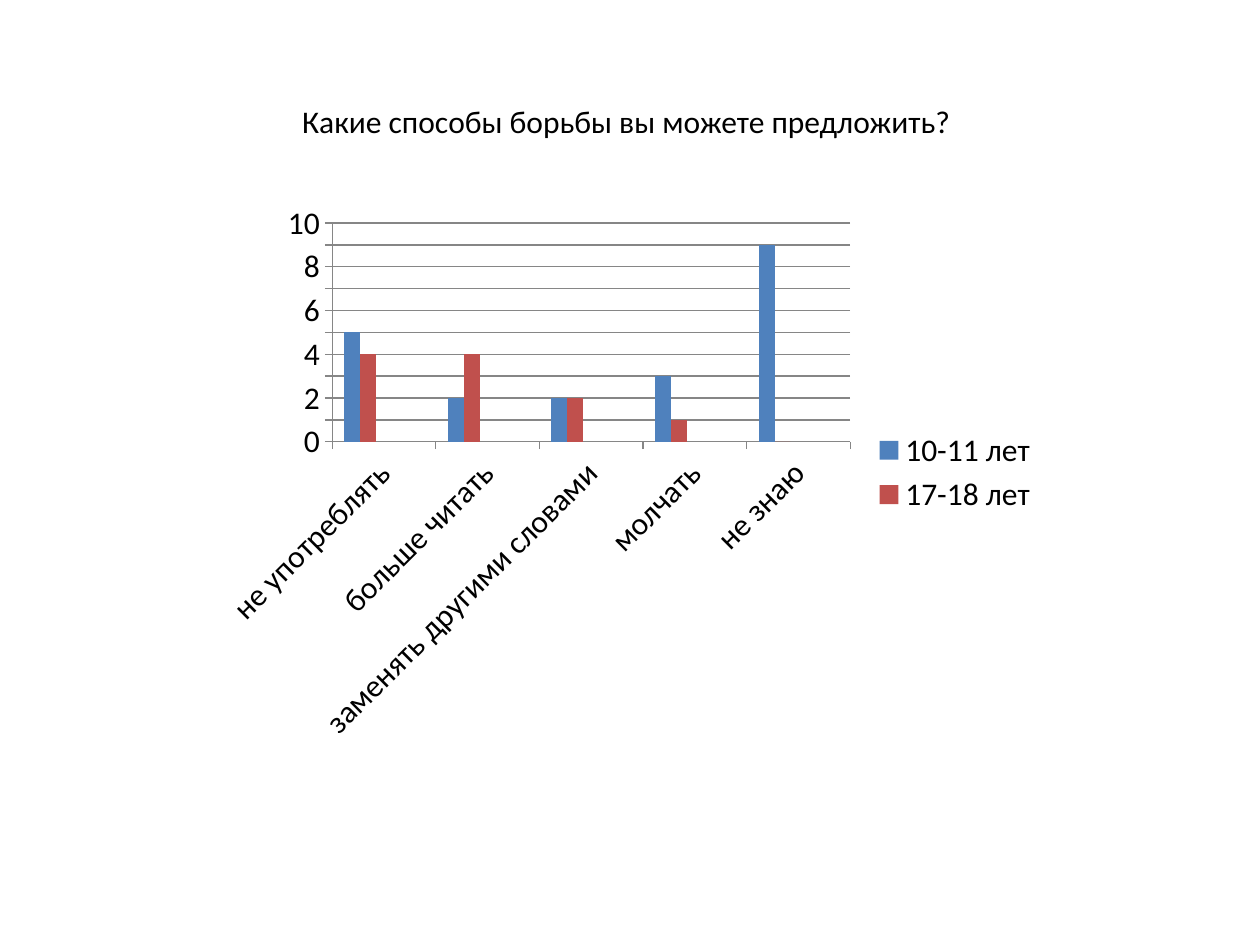
from dataclasses import dataclass

from lxml.etree import SubElement
from pptx import Presentation
from pptx.chart.data import CategoryChartData
from pptx.dml.color import RGBColor
from pptx.enum.chart import XL_CHART_TYPE, XL_LEGEND_POSITION, XL_TICK_MARK
from pptx.enum.text import MSO_AUTO_SIZE
from pptx.oxml.ns import qn
from pptx.util import Inches, Pt


@dataclass(frozen=True)
class Theme:
    face: str = "Calibri"
    size: int = 18
    ink: str = "000000"
    rule: str = "868686"
    fills: tuple = ("4F81BD", "C0504D", "9BBB59", "8064A2", "4BACC6")


class Deck:
    def __init__(self, theme, slide):
        self.theme = theme
        self.slide = slide

    def style(self, font):
        font.name = self.theme.face
        font.size = Pt(self.theme.size)
        font.color.rgb = RGBColor.from_string(self.theme.ink)

    def text(self, box, words):
        frame = self.slide.shapes.add_textbox(*map(Inches, box)).text_frame
        frame.word_wrap = False
        frame.auto_size = MSO_AUTO_SIZE.SHAPE_TO_FIT_TEXT
        run = frame.paragraphs[0].add_run()
        run.text = words
        self.style(run.font)

    def chart(self, box, cats, rows):
        data = CategoryChartData()
        data.categories = cats
        for name, vals in rows:
            data.add_series(name, vals)
        chart = self.slide.shapes.add_chart(
            XL_CHART_TYPE.COLUMN_CLUSTERED, *map(Inches, box), data).chart
        chart.has_title = False
        self.style(chart.font)

        # Bars
        plot = chart.plots[0]
        plot.gap_width = 150
        plot.overlap = 0
        plot.vary_by_categories = False
        for bar, tint in zip(plot.series, self.theme.fills):
            bar.format.fill.solid()
            bar.format.fill.fore_color.rgb = RGBColor.from_string(tint)
            bar.invert_if_negative = False

        self.axes(chart)
        self.legend(chart, [i for i, (_, vals) in enumerate(rows)
                            if all(v is None for v in vals)])

    def axes(self, chart):
        rule = RGBColor.from_string(self.theme.rule)
        scale = chart.value_axis
        scale.minimum_scale, scale.maximum_scale = 0, 10
        scale.major_unit = 1
        scale.has_major_gridlines = True
        for axis in (chart.category_axis, scale):
            axis.major_tick_mark = XL_TICK_MARK.OUTSIDE
            axis.minor_tick_mark = XL_TICK_MARK.NONE
            axis.format.line.color.rgb = rule
            self.style(axis.tick_labels.font)
        scale.major_gridlines.format.line.color.rgb = rule

    def legend(self, chart, blank):
        chart.has_legend = True
        key = chart.legend
        key.position = XL_LEGEND_POSITION.RIGHT
        key.include_in_layout = False
        self.style(key.font)
        # Empty series keep their bar slots but get no legend entry
        root = key._element
        place = root.find(qn("c:legendPos"))
        for i in reversed(blank):
            entry = SubElement(root, qn("c:legendEntry"))
            SubElement(entry, qn("c:idx")).set("val", str(i))
            SubElement(entry, qn("c:delete")).set("val", "1")
            place.addnext(entry)


def main():
    show = Presentation()
    show.slide_width, show.slide_height = Inches(10), Inches(7.5)
    deck = Deck(Theme(), show.slides.add_slide(show.slide_layouts[6]))

    # Answers by age group
    cats = ["не употреблять", "больше читать", "заменять другими словами",
            "молчать", "не знаю"]
    rows = [("10-11 лет", [5, 2, 2, 3, 9]), ("17-18 лет", [4, 4, 2, 1, 0])]
    rows += [(f"Series {n}", [None] * len(cats)) for n in (3, 4, 5)]
    deck.chart((1.67, 1.53, 6.67, 4.44), cats, rows)

    # Question
    deck.text((2.3, 0.76, 5.41, 0.4),
              "Какие способы борьбы вы можете предложить?")
    show.save("out.pptx")


if __name__ == "__main__":
    main()
